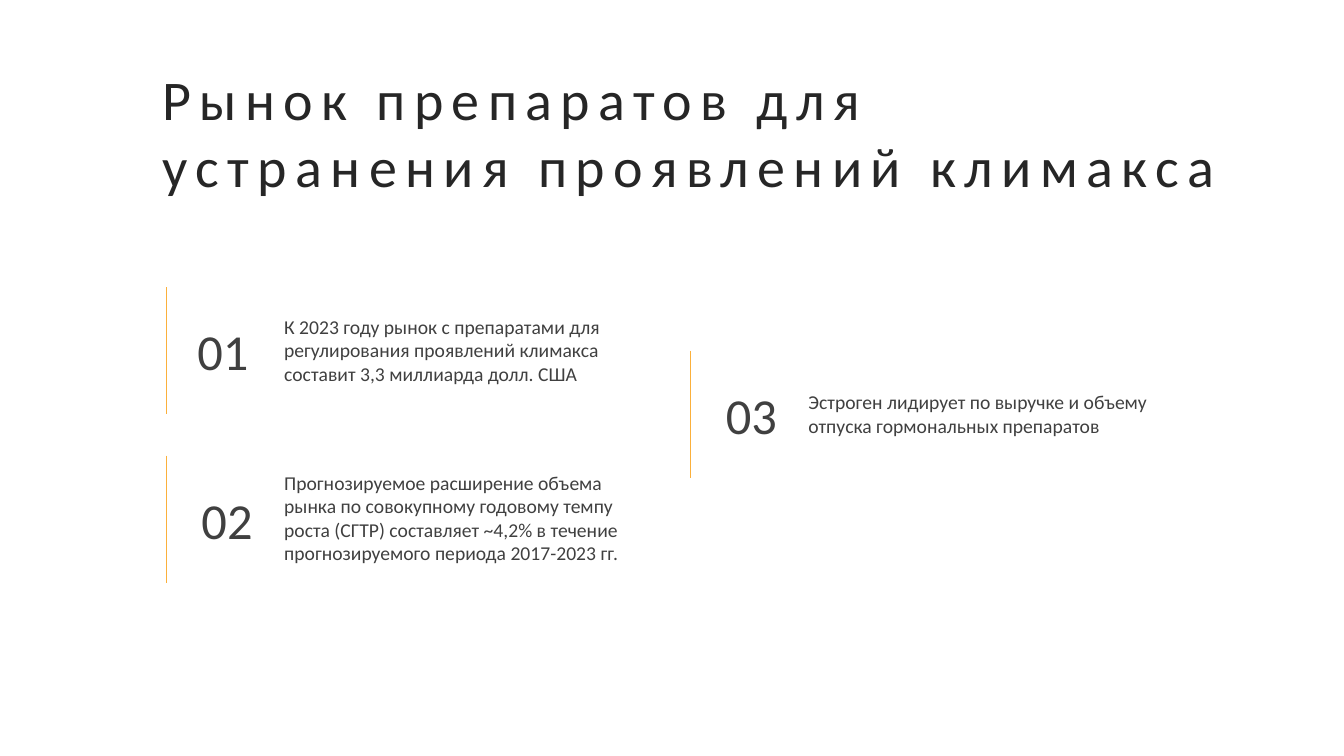
from lxml import etree
from pptx import Presentation
from pptx.dml.color import RGBColor
from pptx.enum.shapes import MSO_CONNECTOR
from pptx.enum.text import MSO_ANCHOR, MSO_AUTO_SIZE, PP_ALIGN
from pptx.oxml.ns import qn
from pptx.util import Pt

PX = 9144  # EMU, 100 px to the inch
STRAIGHT = MSO_CONNECTOR.STRAIGHT
TOP = MSO_ANCHOR.TOP
GROW = MSO_AUTO_SIZE.SHAPE_TO_FIT_TEXT
LEFT = PP_ALIGN.LEFT

INK = RGBColor(0x26, 0x26, 0x26)
GREY = RGBColor(0x40, 0x40, 0x40)
GOLD = RGBColor(0xFB, 0xB0, 0x3B)

TITLE = {"name": "Calibri", "size": Pt(40), "bold": False}
NUMBER = {"name": "Calibri", "size": Pt(36)}
BODY = {"name": "Calibri", "size": Pt(14)}

RULE_H = 126
BODY_X = 107

# left, top, number, number offset and width, text width, text lines, text
CARDS = [
    (165, 285, "01", 21, 101, 336, 3,
     "К 2023 году рынок с препаратами для регулирования проявлений климакса "
     "составит 3,3 миллиарда долл. США"),
    (165, 452, "02", 25, 121, 387, 4,
     "Прогнозируемое расширение объема рынка по совокупному годовому темпу "
     "роста (СГТР) составляет ~4,2% в течение прогнозируемого периода "
     "2017-2023 гг."),
    (685, 348, "03", 25, 121, 387, 2,
     "Эстроген лидирует по выручке и объему отпуска гормональных препаратов"),
]


def scale(*sizes):
    return [size * PX for size in sizes]


def write(shape, text, style, color):
    """Fill a shape with one left-aligned, wrapped paragraph."""
    frame = shape.text_frame
    frame.text = text
    for key, value in {"word_wrap": True, "auto_size": GROW,
                       "vertical_anchor": TOP}.items():
        setattr(frame, key, value)
    para = frame.paragraphs[0]
    para.alignment = LEFT
    para.line_spacing = 1.0
    para.space_before = Pt(0)
    run = para.runs[0]
    for key, value in style.items():
        setattr(run.font, key, value)
    run.font.color.rgb = color
    return run


def add_title(slide, left, top, width, height):
    title = slide.shapes.title
    title.left, title.top, title.width, title.height = scale(
        left, top, width, height)
    run = write(title, "Рынок препаратов для устранения проявлений климакса",
                TITLE, INK)
    run.font._element.set("spc", "600")


def add_card(slide, left, top, number, num_x, num_w, width, lines, text):
    """Place a vertical rule, a number and a text centred on the rule."""
    shapes = slide.shapes.add_group_shape().shapes
    height = 9 + 24 * lines
    body = shapes.add_textbox(*scale(
        left + BODY_X, top + (RULE_H - height) // 2, width, height))
    write(body, text, BODY, GREY)
    label = shapes.add_textbox(*scale(left + num_x, top + 28, num_w, 71))
    write(label, number, NUMBER, GREY)
    rule = shapes.add_connector(
        STRAIGHT, *scale(left, top, left, top + RULE_H))
    rule.line.color.rgb = GOLD
    rule.line.width = Pt(0.5)
    etree.SubElement(rule._element.spPr, qn("a:effectLst"))


def main():
    deck = Presentation()
    deck.slide_width, deck.slide_height = scale(1333, 750)
    slide = deck.slides.add_slide(deck.slide_layouts[5])
    add_title(slide, 151, 59, 1068, 212)
    for card in CARDS:
        add_card(slide, *card)
    deck.save("out.pptx")


if __name__ == "__main__":
    main()
